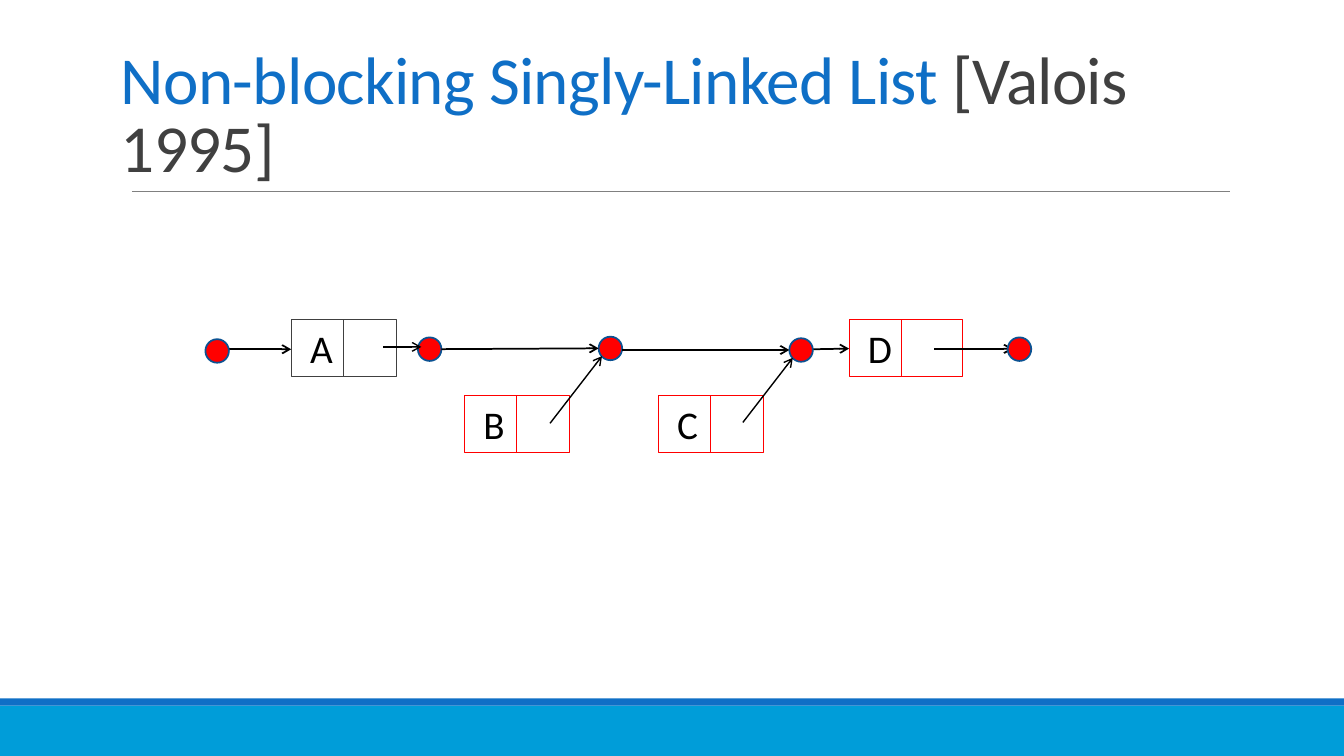
import pptx
import pptx.util
import pptx.dml.color
import pptx.enum.shapes
import pptx.enum.text
import pptx.oxml
import pptx.oxml.ns

Pt = pptx.util.Pt
SHAPES = pptx.enum.shapes.MSO_SHAPE
COLORS = {
    "blue": "0F6FC6",
    "sky": "009DD9",
    "navy": "0B5292",
    "red": "FF0000",
    "gray": "808080",
    "dark": "404040",
    "black": "000000",
}
FONT = "Calibri"
NODE_HEIGHT = 41
DOT_SIZE = 16.8


def color(name):
    return pptx.dml.color.RGBColor.from_string(COLORS[name])


def style_span(span, size, tint):
    span.font.name = FONT
    span.font.size = Pt(size)
    span.font.color.rgb = color(tint)


def add_box(page, kind, left, top, width, height, fill=None, line=None, weight=0.75):
    box = page.shapes.add_shape(kind, Pt(left), Pt(top), Pt(width), Pt(height))
    box.shadow.inherit = False
    if fill:
        box.fill.solid()
        box.fill.fore_color.rgb = color(fill)
    else:
        box.fill.background()
    if line:
        box.line.color.rgb = color(line)
        box.line.width = Pt(weight)
    else:
        box.line.fill.background()
    return box


def add_line(page, start, end, tint="black", weight=1.25, arrow=True):
    line = page.shapes.add_connector(
        pptx.enum.shapes.MSO_CONNECTOR.STRAIGHT,
        Pt(start[0]), Pt(start[1]), Pt(end[0]), Pt(end[1]),
    )
    line.line.color.rgb = color(tint)
    line.line.width = Pt(weight)
    properties = line._element.spPr
    if arrow:
        head = pptx.oxml.parse_xml(
            f'<a:tailEnd {pptx.oxml.ns.nsdecls("a")} type="arrow"/>'
        )
        line.line._get_or_add_ln().append(head)
    properties.append(
        pptx.oxml.parse_xml(f'<a:effectLst {pptx.oxml.ns.nsdecls("a")}/>')
    )


def add_node(page, letter, left, top, line="red", pointer_width=37.6):
    label_width = 37.4
    label = add_box(page, SHAPES.RECTANGLE, left, top, label_width, NODE_HEIGHT, line=line)
    add_box(page, SHAPES.RECTANGLE, left + label_width, top, pointer_width, NODE_HEIGHT, line=line)
    frame = label.text_frame
    frame.word_wrap = True
    frame.margin_left = Pt(13.5)
    frame.margin_right = 0
    frame.vertical_anchor = pptx.enum.text.MSO_ANCHOR.MIDDLE
    frame.text = letter
    para = frame.paragraphs[0]
    para.alignment = pptx.enum.text.PP_ALIGN.LEFT
    style_span(para.runs[0], 28, "black")


def add_dot(page, left, top):
    add_box(page, SHAPES.OVAL, left, top, DOT_SIZE, DOT_SIZE, "red", "navy", 1.25)


def set_title(page, parts):
    title = page.shapes.title
    title.left, title.top, title.width, title.height = Pt(79.2), Pt(22.3), Pt(846), Pt(114.5)
    frame = title.text_frame
    frame.word_wrap = True
    frame.auto_size = pptx.enum.text.MSO_AUTO_SIZE.NONE
    frame.margin_right = Pt(20)
    frame.vertical_anchor = pptx.enum.text.MSO_ANCHOR.BOTTOM
    para = frame.paragraphs[0]
    para.alignment = pptx.enum.text.PP_ALIGN.LEFT
    para.line_spacing = 0.85
    for text, tint in parts:
        span = para.add_run()
        span.text = text
        style_span(span, 48, tint)
        span.font._element.set("spc", "-50")


def main():
    deck = pptx.Presentation()
    deck.slide_width, deck.slide_height = Pt(960), Pt(540)
    page = deck.slides.add_slide(deck.slide_layouts[5])

    add_box(page, SHAPES.RECTANGLE, 0, 504, 960, 36, "sky")
    add_box(page, SHAPES.RECTANGLE, 0, 498.8, 960, 5.2, "blue")
    add_line(page, (94.3, 136.6), (878.8, 136.6), "gray", 0.5, arrow=False)
    set_title(page, [
        ("Non-blocking Singly-Linked List ", "blue"),
        ("[Valois 1995]", "dark"),
    ])

    upper, lower = 228.3, 282.2
    add_node(page, "A", 208.1, upper, "dark")
    add_node(page, "B", 331.7, lower)
    add_node(page, "C", 470.2, lower)
    add_node(page, "D", 606.5, upper, pointer_width=43.6)

    for start, end in [
        ((152, 249.5), (208, 249.5)),
        ((564, 249.8), (606.5, 249)),
        ((667.2, 249.2), (723.6, 249.2)),
    ]:
        add_line(page, start, end)

    for left, top in [
        (298.5, 241), (427.6, 240.5), (146.7, 242.3), (563.8, 241.6), (719.8, 241),
    ]:
        add_dot(page, left, top)

    for start, end in [
        ((392.9, 302.4), (430, 254.4)),
        ((530.6, 301.8), (566.3, 255.6)),
        ((273.6, 247.8), (301, 247.8)),
    ]:
        add_line(page, start, end, weight=1)
    add_line(page, (444.4, 250), (563.8, 250))
    add_line(page, (315.3, 249.4), (427.6, 248.8))

    deck.save("out.pptx")


if __name__ == "__main__":
    main()
